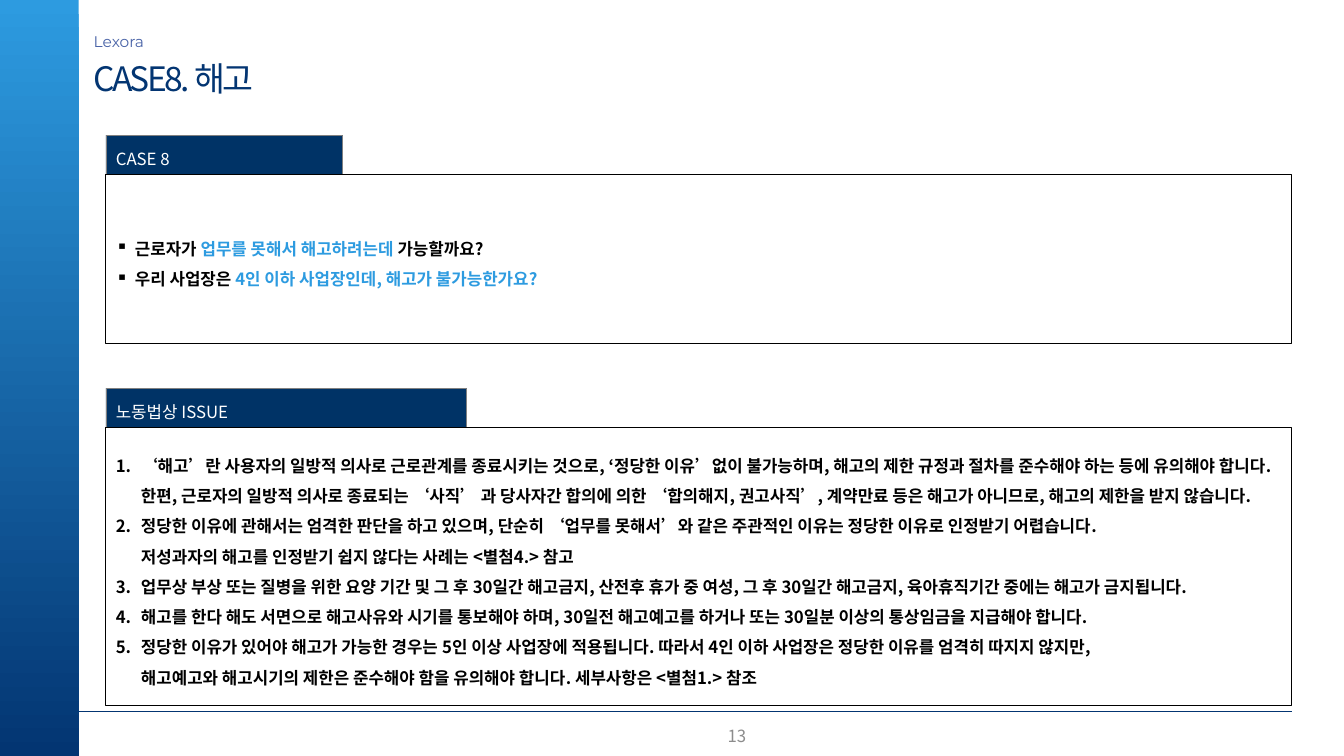
from lxml.etree import SubElement
from pptx import Presentation
from pptx.dml.color import RGBColor
from pptx.enum.shapes import MSO_CONNECTOR, MSO_SHAPE
from pptx.enum.text import MSO_ANCHOR, PP_ALIGN
from pptx.oxml.ns import qn
from pptx.util import Inches, Pt

# Content
BRAND = "Lexora"
TITLE = "CASE8. 해고"
PAGE = "13"
ASKS = [
    ["근로자가 ", "업무를 못해서 해고하려는데 ", "가능할까요?"],
    ["우리 사업장은 ", "4인 이하 사업장인데, 해고가 불가능한가요?"],
]
RULES = [
    ["‘해고’란 사용자의 일방적 의사로 근로관계를 종료시키는 것으로, ‘정당한 이유’없이 불가능하며, "
     "해고의 제한 규정과 절차를 준수해야 하는 등에 유의해야 합니다.\v"
     "한편, 근로자의 일방적 의사로 종료되는 ‘사직’ 과 당사자간 합의에 의한 ‘합의해지, 권고사직’, "
     "계약만료 등은 해고가 아니므로, 해고의 제한을 받지 않습니다."],
    ["정당한 이유에 관해서는 엄격한 판단을 하고 있으며, 단순히 ‘업무를 못해서’와 같은 주관적인 이유는 "
     "정당한 이유로 인정받기 어렵습니다.\v"
     "저성과자의 해고를 인정받기 쉽지 않다는 사례는 <별첨4.> 참고"],
    ["업무상 부상 또는 질병을 위한 요양 기간 및 그 후 30일간 해고금지, 산전후 휴가 중 여성, "
     "그 후 30일간 해고금지, 육아휴직기간 중에는 해고가 금지됩니다."],
    ["해고를 한다 해도 서면으로 해고사유와 시기를 통보해야 하며, 30일전 해고예고를 하거나 또는 "
     "30일분 이상의 통상임금을 지급해야 합니다."],
    ["정당한 이유가 있어야 해고가 가능한 경우는 5인 이상 사업장에 적용됩니다. 따라서 4인 이하 사업장은 "
     "정당한 이유를 엄격히 따지지 않지만,\v"
     "해고예고와 해고시기의 제한은 준수해야 함을 유의해야 합니다. 세부사항은 <별첨1.> 참조"],
]
DOT = ("buChar", {"char": "▪"})
NUM = ("buAutoNum", {"type": "arabicPeriod"})
# Tab label, top, tab width, body height, bullet, indent, items
PANELS = [
    ("노동법상 ISSUE", 3.85, 3.58, 2.76, NUM, 0.25, RULES),
    ("CASE 8", 1.34, 2.35, 1.68, DOT, 0.19, ASKS),
]

# Style and grid
SANS, MONT = "Noto Sans CJK KR", "Montserrat"
NAVY, SKY, TAB, BLACK, WHITE = "033572", "2D9BE0", "003366", "000000", "FFFFFF"
WIDE, HIGH = 13.33, 7.5
BAR, HEAD, LEFT, RIGHT = 0.78, 0.93, 1.05, 12.81
TAB_H, STEP, RULE_Y = 0.47, 0.39, 7.06


def hue(code):
    return RGBColor.from_string(code)


def style(para, size, color, face=SANS, bold=False):
    font = para.font
    font.size, font.bold, font.name = Pt(size), bold, face
    font.color.rgb = hue(color)
    SubElement(font._element, qn("a:ea"), typeface=face)


def indent(para, size, mark=None):
    props = para._p.get_or_add_pPr()
    props.set("marL", str(Inches(size)))
    props.set("indent", str(-Inches(size)))
    if mark:
        tag, attrs = mark
        SubElement(props, qn("a:" + tag), attrs)


def rect(left, top, width, height, fill=None, line=None):
    box = slide.shapes.add_shape(MSO_SHAPE.RECTANGLE, *map(Inches, (left, top, width, height)))
    box.shadow.inherit = False
    if fill:
        box.fill.solid()
        box.fill.fore_color.rgb = hue(fill)
    if line:
        box.line.color.rgb = hue(line)
        box.line.width = Pt(0.5)
    else:
        box.line.fill.background()
    box.text_frame.word_wrap = True
    box.text_frame.vertical_anchor = MSO_ANCHOR.MIDDLE
    return box


def label(left, top, width, height, text, size, color, face=SANS, wrap=True):
    box = slide.shapes.add_textbox(*map(Inches, (left, top, width, height)))
    frame = box.text_frame
    frame.word_wrap = wrap
    frame.text = text
    style(frame.paragraphs[0], size, color, face)
    return frame


def panel(name, top, width, height, mark, gap, items):
    # Tab
    para = rect(LEFT, top, width, TAB_H, TAB, "808080").text_frame.paragraphs[0]
    para.text, para.alignment = name, PP_ALIGN.LEFT
    indent(para, 0.1)
    style(para, 12, WHITE)
    # Body, with every second part of an item in the accent colour
    frame = rect(LEFT, top + STEP, RIGHT - LEFT, height, WHITE, BLACK).text_frame
    for row, parts in enumerate(items):
        para = frame.add_paragraph() if row else frame.paragraphs[0]
        para.alignment, para.line_spacing = PP_ALIGN.LEFT, 1.5
        indent(para, gap, mark)
        style(para, 12, BLACK, bold=True)
        if len(parts) == 1:
            para.text = parts[0]
            continue
        for spot, part in enumerate(parts):
            run = para.add_run()
            run.text = part
            run.font.color.rgb = hue(SKY if spot % 2 else BLACK)


deck = Presentation()
deck.slide_width, deck.slide_height = Inches(WIDE), Inches(HIGH)
slide = deck.slides.add_slide(deck.slide_layouts[6])

# Side bar
fill = rect(0, 0, BAR, HIGH).fill
fill.gradient()
fill.gradient_angle = 270
for stop, color in zip(fill.gradient_stops, (SKY, NAVY)):
    stop.color.rgb = hue(color)

# Footer
rule = slide.shapes.add_connector(
    MSO_CONNECTOR.STRAIGHT, *map(Inches, (BAR, RULE_Y, RIGHT, RULE_Y)))
rule.line.color.rgb, rule.line.width = hue(NAVY), Pt(0.75)
SubElement(rule._element.spPr, qn("a:effectLst"))
foot = label(4.5, 7.1, 3, 0.4, PAGE, 12, "8C8C8C")
foot.vertical_anchor = MSO_ANCHOR.MIDDLE
foot.paragraphs[0].alignment = PP_ALIGN.RIGHT

# Heading
head = label(HEAD, 0.57, 8.83, 0.4, TITLE, 24, NAVY)
head.vertical_anchor = MSO_ANCHOR.MIDDLE
head.margin_left = head.margin_right = head.margin_top = head.margin_bottom = 0
head.paragraphs[0].runs[0]._r.get_or_add_rPr().set("spc", "-200")
label(HEAD, 0.27, 0.67, 0.29, BRAND, 11, "4963A7", MONT, False).margin_left = 0

# Panels
for item in PANELS:
    panel(*item)

deck.save("out.pptx")
